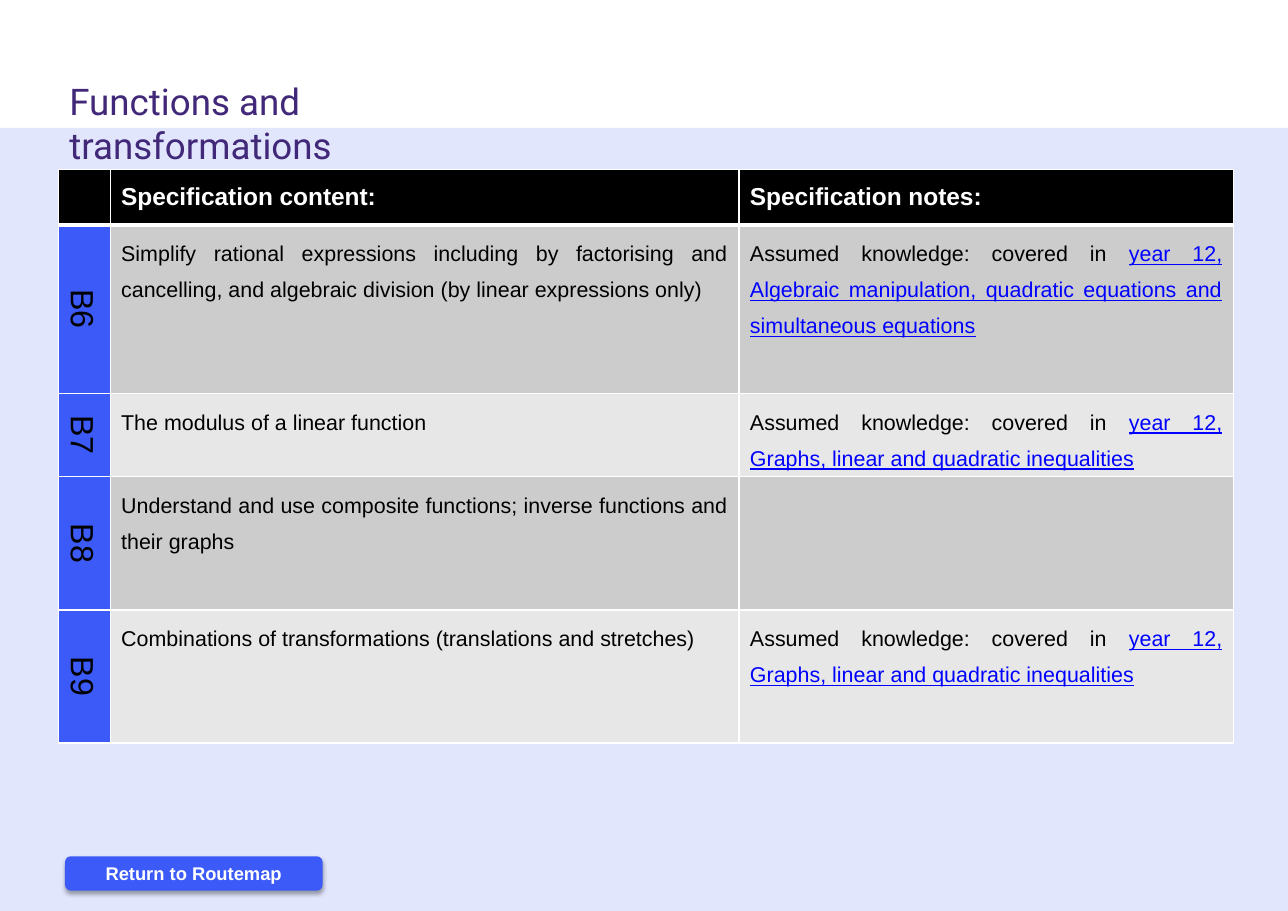
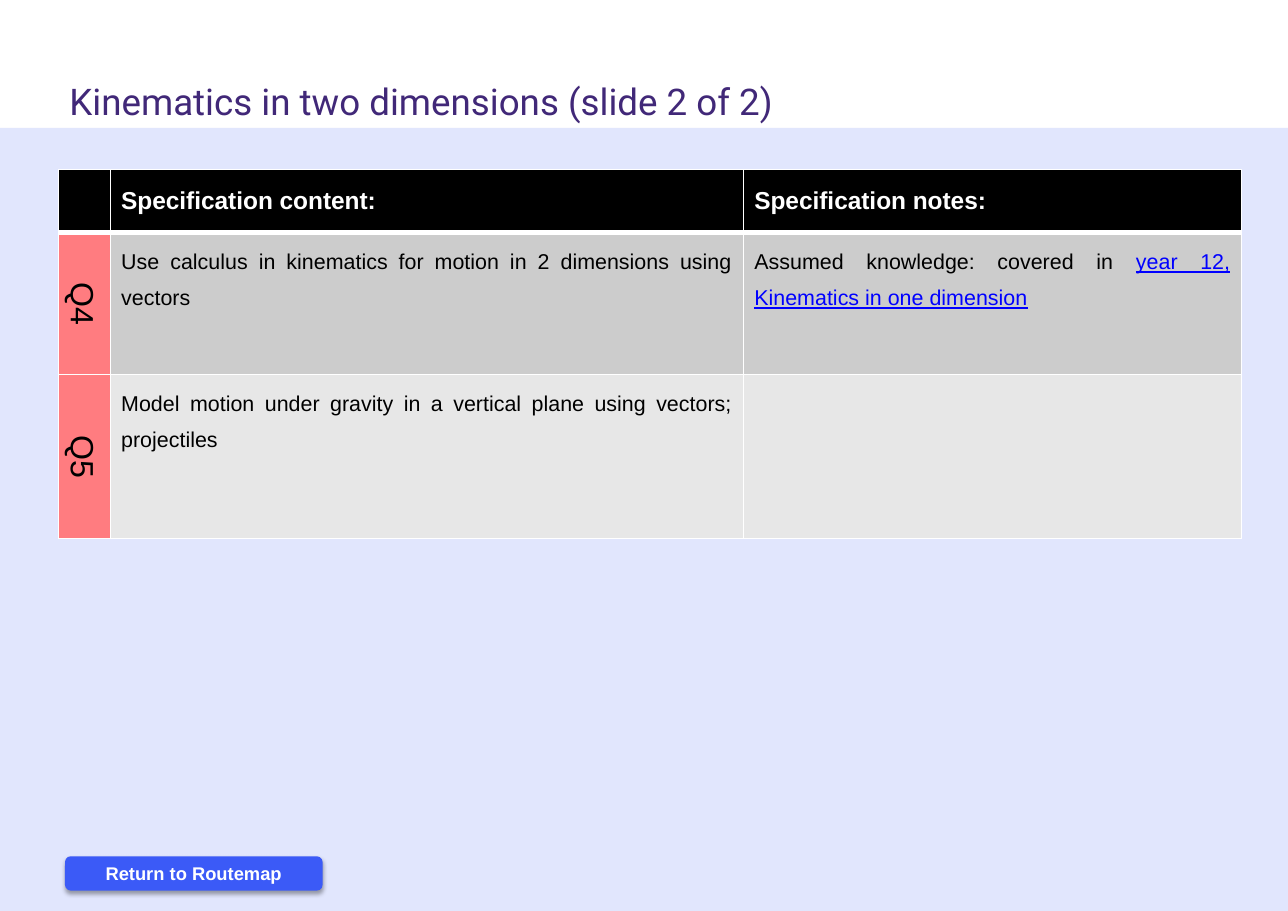
from pptx import Presentation
from pptx.dml.color import RGBColor
from pptx.enum.shapes import MSO_SHAPE
from pptx.enum.text import MSO_ANCHOR, PP_ALIGN
from pptx.oxml import parse_xml
from pptx.oxml.ns import nsdecls, qn
from pptx.util import Cm, Pt

HUES = {
    "blue": "3B5AF7", "rose": "FF7C80", "title": "412878", "link": "0000FF",
    "black": "000000", "white": "FFFFFF", "dark": "CCCCCC", "pale": "E7E7E7",
}
STYLES = {
    "title": {"name": "Roboto", "size": Pt(24), "hue": "title"},
    "button": {"name": "Arial", "size": Pt(12), "bold": True, "hue": "white"},
    "head": {"name": "Arial", "size": Pt(16), "bold": True, "hue": "white"},
    "code": {"name": "Arial", "size": Pt(21), "bold": False, "hue": "black"},
    "body": {"name": "Arial", "size": Pt(14), "bold": False, "hue": "black"},
    "link": {"name": "Arial", "size": Pt(14), "bold": False, "underline": True,
             "hue": "link"},
}
HEADS = ["", "Specification content:", "Specification notes:"]
KNOWN = "Assumed knowledge: covered in "
GRAPHS = "year 12, Graphs, linear and quadratic inequalities"
PAGES = [
    {
        "title": "Functions and transformations", "width": 11.33, "hue": "blue",
        "cols": [1.19, 14.5, 11.4], "tall": [1.27, 3.89, 1.78, 3.07, 3.07],
        "rows": [
            ("B6", "Simplify rational expressions including by factorising and "
             "cancelling, and algebraic division (by linear expressions only)",
             "year 12, Algebraic manipulation, quadratic equations and "
             "simultaneous equations"),
            ("B7", "The modulus of a linear function", GRAPHS),
            ("B8", "Understand and use composite functions; inverse functions "
             "and their graphs", ""),
            ("B9", "Combinations of transformations (translations and "
             "stretches)", GRAPHS),
        ],
    },
    {
        "title": "Kinematics in two dimensions (slide 2 of 2)", "width": 17.45,
        "hue": "rose",
        "cols": [1.19, 14.6, 11.48], "tall": [1.45, 3.28, 3.78],
        "rows": [
            ("Q4", "Use calculus in kinematics for motion in 2 dimensions using "
             "vectors", "year 12, Kinematics in one dimension"),
            ("Q5", "Model motion under gravity in a vertical plane using "
             "vectors; projectiles", ""),
        ],
    },
]


def write(para, text, style):
    run = para.add_run()
    run.text = text
    for key, value in STYLES[style].items():
        if key == "hue":
            run.font.color.rgb = RGBColor.from_string(HUES[value])
        else:
            setattr(run.font, key, value)


def paint(cell, hue, base=1):
    """Fill a cell and rule it in white, with base as the lower line's points."""
    props = cell._tc.get_or_add_tcPr()
    for side, width in zip("LRTB", (1, 1, 1, base)):
        props.append(parse_xml(
            f'<a:ln{side} {nsdecls("a")} w="{Pt(width)}"><a:solidFill>'
            f'<a:srgbClr val="{HUES["white"]}"/></a:solidFill></a:ln{side}>'))
    cell.fill.solid()
    cell.fill.fore_color.rgb = RGBColor.from_string(HUES[hue])


deck = Presentation()
deck.slide_width, deck.slide_height = Cm(29.7), Cm(21)

for page in PAGES:
    slide = deck.slides.add_slide(deck.slide_layouts[6])
    shapes = slide.shapes

    band = shapes.add_shape(MSO_SHAPE.RECTANGLE, 0, Cm(2.95), Cm(29.7), Cm(18.05))
    button = shapes.add_shape(
        MSO_SHAPE.ROUNDED_RECTANGLE, Cm(1.5), Cm(19.74), Cm(5.94), Cm(0.79))
    for shape in (band, button):
        shape.fill.solid()
        shape.fill.fore_color.rgb = RGBColor.from_string(HUES["blue"])
        shape.line.fill.background()
        shape.shadow.inherit = False
    tint = band._element.spPr.find(qn("a:solidFill"))[0]
    tint.append(parse_xml(f'<a:alpha {nsdecls("a")} val="15000"/>'))
    button._element.spPr.find(qn("a:effectLst")).append(parse_xml(
        f'<a:outerShdw {nsdecls("a")} blurRad="{Pt(3.1)}" dist="{Pt(1.8)}" '
        f'dir="5400000" rotWithShape="0"><a:srgbClr val="{HUES["black"]}">'
        '<a:alpha val="35000"/></a:srgbClr></a:outerShdw>'))
    label = button.text_frame
    label.vertical_anchor = MSO_ANCHOR.MIDDLE
    label.paragraphs[0].alignment = PP_ALIGN.CENTER
    write(label.paragraphs[0], "Return to Routemap", "button")

    table = shapes.add_table(
        len(page["tall"]), len(HEADS), Cm(1.35), Cm(3.91),
        Cm(sum(page["cols"])), Cm(sum(page["tall"]))).table
    table.horz_banding = False
    for col, width in zip(table.columns, page["cols"]):
        col.width = Cm(width)
    for row, height in zip(table.rows, page["tall"]):
        row.height = Cm(height)

    for col, text in enumerate(HEADS):
        cell = table.cell(0, col)
        paint(cell, "black", 3)
        cell.vertical_anchor = MSO_ANCHOR.MIDDLE
        if text:
            write(cell.text_frame.paragraphs[0], text, "head")

    for row, (code, content, link) in enumerate(page["rows"], 1):
        shade = "dark" if row % 2 else "pale"
        cells = [table.cell(row, col) for col in range(len(HEADS))]
        paras = [cell.text_frame.paragraphs[0] for cell in cells]
        for cell, hue in zip(cells, (page["hue"], shade, shade)):
            paint(cell, hue)
        cells[0]._tc.tcPr.set("vert", "vert")
        paras[0].alignment = PP_ALIGN.CENTER
        for para in paras[1:]:
            para.alignment = PP_ALIGN.JUSTIFY
            para.line_spacing = 1.5
        write(paras[0], code, "code")
        write(paras[1], content, "body")
        if link:
            write(paras[2], KNOWN, "body")
            write(paras[2], link, "link")

    title = shapes.add_textbox(Cm(1.35), Cm(1.7), Cm(page["width"]), Cm(1.27))
    title.text_frame.word_wrap = True
    write(title.text_frame.paragraphs[0], page["title"], "title")

deck.save("out.pptx")
